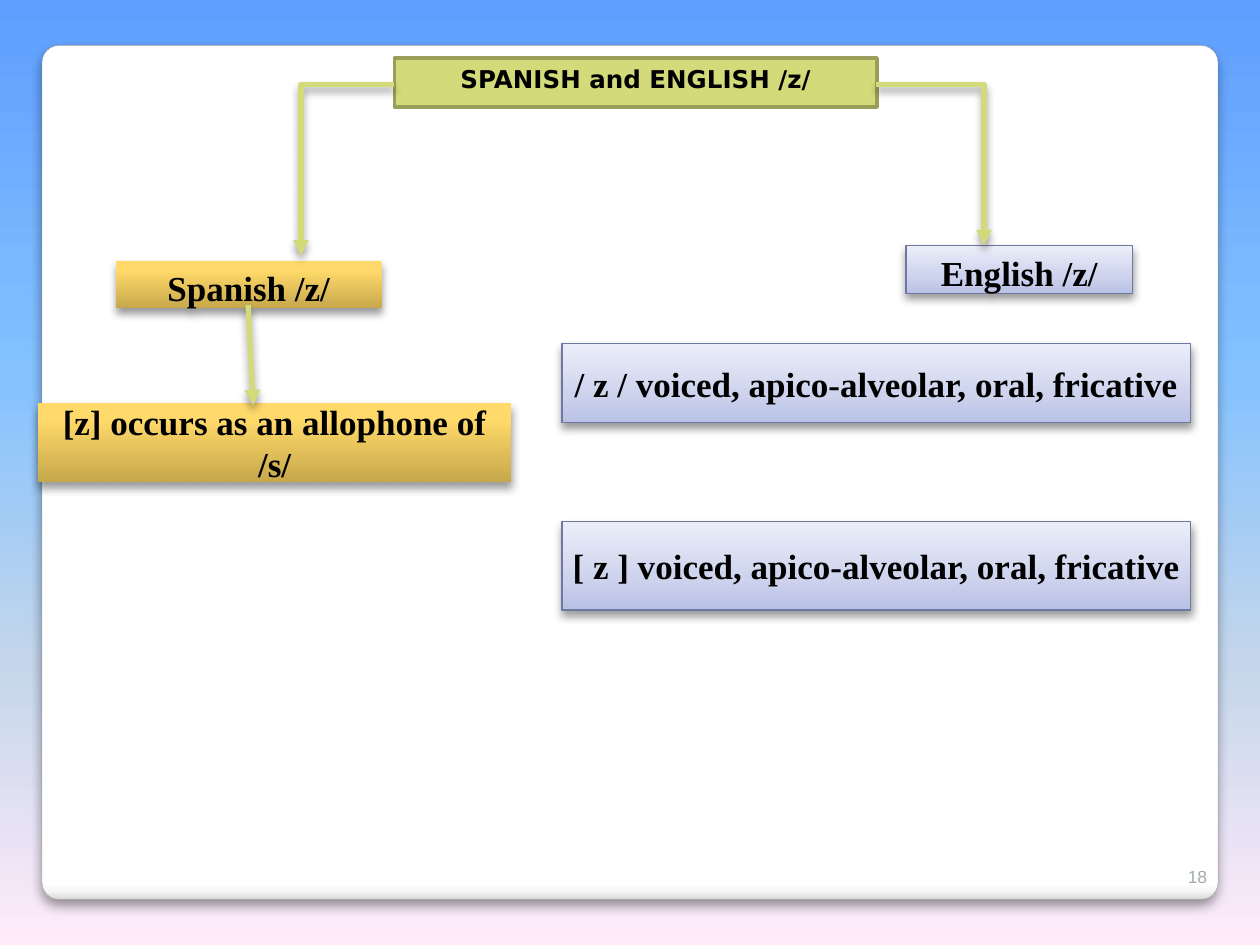
from lxml import etree
from pptx import Presentation
from pptx.dml.color import RGBColor
from pptx.enum.shapes import MSO_CONNECTOR, MSO_SHAPE
from pptx.enum.text import MSO_ANCHOR, PP_ALIGN
from pptx.oxml.ns import qn
from pptx.util import Pt

RECT, ROUNDED = MSO_SHAPE.RECTANGLE, MSO_SHAPE.ROUNDED_RECTANGLE
STRAIGHT = MSO_CONNECTOR.STRAIGHT
TOP, MIDDLE, BOTTOM = MSO_ANCHOR.TOP, MSO_ANCHOR.MIDDLE, MSO_ANCHOR.BOTTOM
CENTER, RIGHT = PP_ALIGN.CENTER, PP_ALIGN.RIGHT

# Gradients run from top to bottom: (percent, colour)
SKY = [(0, "5E9EFF"), (40, "85C2FF"), (70, "C4D6EB"), (100, "FFEBFA")]
PAPER = [(0, "FFFFFF"), (98, "FFFFFF"), (99, "F7F7F7"), (100, "D9D9D9")]
GOLD = [(0, "FFDA6B"), (20, "FFD969"), (100, "C6A84C")]
LILAC = [(0, "EBEEF9"), (65, "CDD3ED"), (100, "B9C1E6")]
GREEN = "D2DA7A"
LILAC_EDGE = ("6E78A0", 0.75)
SOFT_SHADOW = (40, 5, 3)  # opacity in percent, blur and distance in points


def color(value):
    return RGBColor.from_string(value)


class Diagram:
    font = "Times New Roman"
    size = 20
    inset = 3.6

    def __init__(self, slide):
        self.slide = slide
        self.shapes = slide.shapes

    def gradient(self, fill, element, stops):
        fill.gradient()
        fill.gradient_angle = 270
        stop_list = next(element.iter(qn("a:gsLst")))
        for old in list(stop_list):
            stop_list.remove(old)
        for percent, value in stops:
            stop = etree.SubElement(stop_list, qn("a:gs"), pos=str(percent * 1000))
            etree.SubElement(stop, qn("a:srgbClr"), val=value)

    def background(self, stops):
        self.gradient(self.slide.background.fill, self.slide.element, stops)

    def shadow(self, shape, style):
        effects = etree.SubElement(shape.element.spPr, qn("a:effectLst"))
        if style:
            opacity, blur, distance = style
            outer = etree.SubElement(
                effects, qn("a:outerShdw"), blurRad=str(Pt(blur)),
                dist=str(Pt(distance)), dir="5400000", rotWithShape="0")
            black = etree.SubElement(outer, qn("a:srgbClr"), val="000000")
            etree.SubElement(black, qn("a:alpha"), val=str(opacity * 1000))

    def set_text(self, shape, text, anchor, align=CENTER, font=None, size=None,
                 ink="000000", bold=True):
        frame = shape.text_frame
        frame.word_wrap = True
        frame.vertical_anchor = anchor
        frame.margin_left = frame.margin_right = Pt(self.inset)
        frame.margin_top = frame.margin_bottom = Pt(self.inset)
        paragraph = frame.paragraphs[0]
        paragraph.text = text
        paragraph.alignment = align
        paragraph.font.name = font or self.font
        paragraph.font.size = Pt(size or self.size)
        paragraph.font.bold = bold
        paragraph.font.color.rgb = color(ink)

    def box(self, area, fill, edge=None, shadow=SOFT_SHADOW, kind=RECT):
        shape = self.shapes.add_shape(kind, *map(Pt, area))
        if isinstance(fill, str):
            shape.fill.solid()
            shape.fill.fore_color.rgb = color(fill)
        else:
            self.gradient(shape.fill, shape.element, fill)
        if edge:
            shape.line.color.rgb = color(edge[0])
            shape.line.width = Pt(edge[1])
        else:
            shape.line.fill.background()
        self.shadow(shape, shadow)
        return shape

    def label(self, area, text, **style):
        self.set_text(self.shapes.add_textbox(*map(Pt, area)), text, **style)

    def arrow(self, *points):
        start, *rest = [tuple(map(Pt, point)) for point in points]
        if len(rest) == 1:
            shape = self.shapes.add_connector(STRAIGHT, *start, *rest[0])
        else:
            builder = self.shapes.build_freeform(*start)
            builder.add_line_segments(rest, close=False)
            shape = builder.convert_to_shape()
            shape.fill.background()
        shape.line.color.rgb = color(GREEN)
        shape.line.width = Pt(3)
        outline = shape.element.spPr.find(qn("a:ln"))
        etree.SubElement(outline, qn("a:tailEnd"), type="triangle")
        self.shadow(shape, SOFT_SHADOW)


def main():
    deck = Presentation()
    deck.slide_width, deck.slide_height = Pt(720), Pt(540)
    diagram = Diagram(deck.slides.add_slide(deck.slide_layouts[6]))

    # Backdrop and white panel
    diagram.background(SKY)
    panel = diagram.box((24, 26, 672, 488), PAPER, ("A2A1A1", 0.25), (40, 6, 4), ROUNDED)
    panel.adjustments[0] = 0.02

    # Heading
    heading = diagram.box((225.4, 33.1, 275.8, 28.1), GREEN, ("999F59", 2), None)
    diagram.set_text(heading, "SPANISH and ENGLISH /z/", TOP, font="DejaVu Sans", size=14)

    # Spanish and English branches
    for area, fill, edge, anchor, text in [
        ((66.2, 149, 152, 27.2), GOLD, None, TOP, "Spanish /z/"),
        ((517.7, 140.4, 129.6, 27.2), LILAC, LILAC_EDGE, TOP, "English /z/"),
        ((21.6, 230.6, 270.7, 45), GOLD, None, MIDDLE,
         "[z] occurs as an allophone of /s/"),
        ((321.1, 196.4, 359.3, 45), LILAC, LILAC_EDGE, MIDDLE,
         "/ z / voiced, apico-alveolar, oral, fricative"),
        ((321.1, 298, 359.3, 50.6), LILAC, LILAC_EDGE, MIDDLE,
         "[ z ] voiced, apico-alveolar, oral, fricative"),
    ]:
        diagram.set_text(diagram.box(area, fill, edge), text, anchor)

    # Arrows
    diagram.arrow((225, 48.2), (172, 48.2), (172, 146.2))
    diagram.arrow((141.8, 174.2), (144.7, 231.8))
    diagram.arrow((500.4, 48.2), (562.3, 48.2), (562.3, 140.4))

    # Page number
    diagram.label((657.4, 492.5, 36, 18), "18", anchor=BOTTOM, align=RIGHT,
                  font="Arial", size=10, ink="A1AAAC", bold=False)

    deck.save("out.pptx")


if __name__ == "__main__":
    main()
